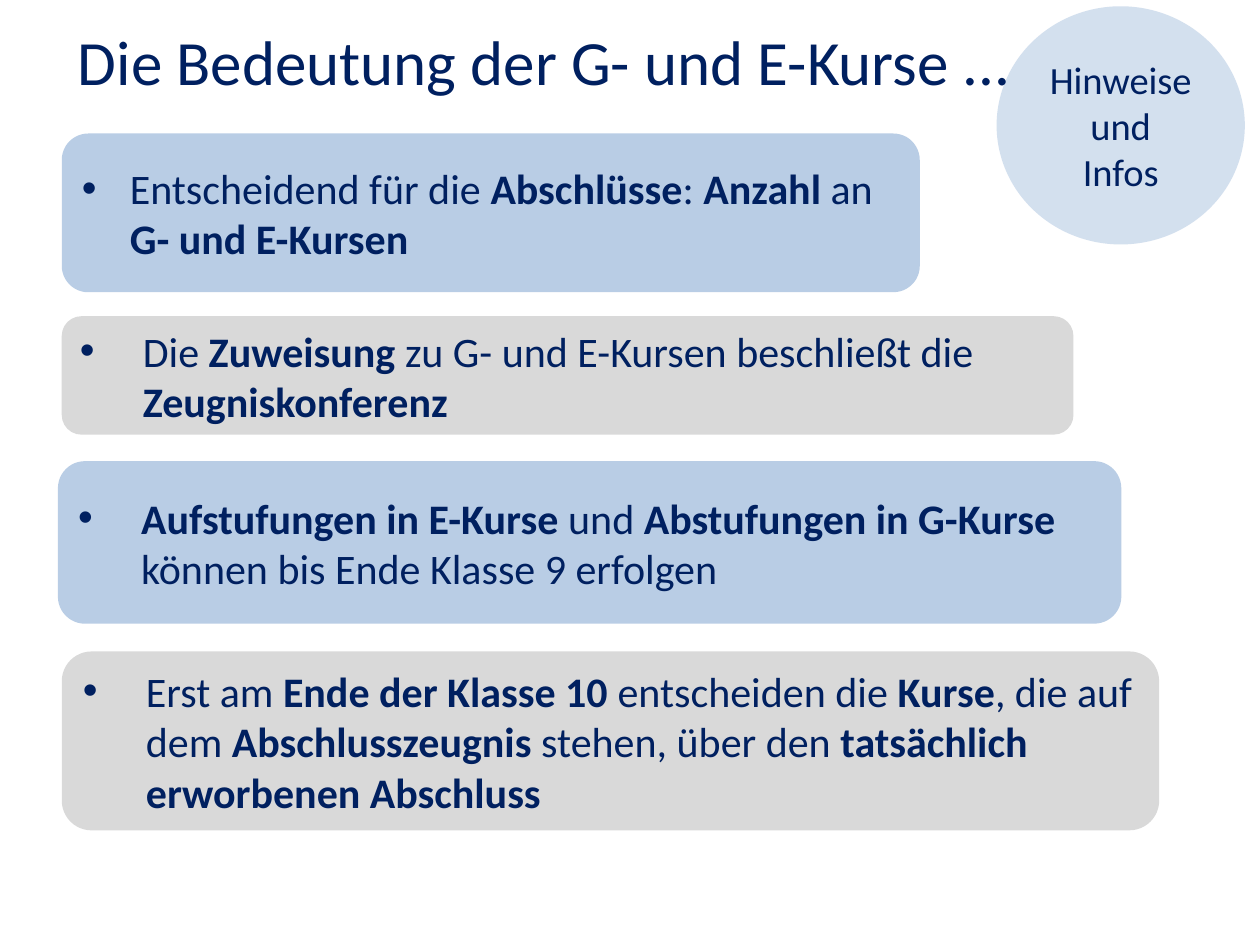
from dataclasses import dataclass

from lxml.etree import SubElement
from pptx import Presentation
from pptx.dml.color import RGBColor
from pptx.enum.shapes import MSO_SHAPE
from pptx.enum.text import MSO_ANCHOR, PP_ALIGN
from pptx.oxml.ns import qn
from pptx.util import Inches, Pt


@dataclass(frozen=True)
class Theme:
    font: str = "Calibri"
    ink: str = "002060"
    blue: str = "B9CDE5"
    gray: str = "D9D9D9"
    title: int = 36
    body: int = 24
    badge: int = 22
    badge_alpha: int = 62


THEME = Theme()
WIDTH, HEIGHT = Inches(10), Inches(7.5)
COLS, ROWS = 100, 75

# Column, row, width and height on the grid
TITLE_BOX = (5.2, 1.3, 96.7, 7.1)
BADGE_BOX = (79.1, 0.5, 19.7, 18.9)

# Box, indent in columns, text with *bold* parts
CARDS = [
    ((4.9, 10.6, 68.1, 12.6), 3.8,
     "Entscheidend für die *Abschlüsse*: *Anzahl* an *G- und E-Kursen*"),
    ((4.9, 25.1, 80.3, 9.4), 5,
     "Die *Zuweisung* zu G- und E-Kursen beschließt die *Zeugniskonferenz*"),
    ((4.6, 36.6, 84.4, 12.9), 5,
     "*Aufstufungen in E-Kurse *und *Abstufungen in G-Kurse*"
     " können bis Ende Klasse 9 erfolgen"),
    ((4.9, 51.7, 87.1, 14.2), 5,
     "Erst am *Ende der Klasse 10 *entscheiden die *Kurse*, die auf dem "
     "*Abschlusszeugnis* stehen, über den *tatsächlich erworbenen Abschluss*"),
]


def place(box):
    left, top, width, height = box
    col, row = WIDTH / COLS, HEIGHT / ROWS
    return [round(n) for n in (left * col, top * row, width * col, height * row)]


def style(run, size, bold=False):
    run.font.name = THEME.font
    run.font.size = Pt(size)
    run.font.bold = bold
    run.font.color.rgb = RGBColor.from_string(THEME.ink)


def add_panel(slide, kind, box, color):
    panel = slide.shapes.add_shape(kind, *place(box))
    panel.shadow.inherit = False
    panel.fill.solid()
    panel.fill.fore_color.rgb = RGBColor.from_string(color)
    panel.line.fill.background()
    panel.text_frame.word_wrap = True
    panel.text_frame.vertical_anchor = MSO_ANCHOR.MIDDLE
    return panel


def add_bullet(para, indent):
    """Hang the paragraph behind a dot, indented by grid columns."""
    props = para._p.get_or_add_pPr()
    depth = round(indent * WIDTH / COLS)
    props.set("marL", str(depth))
    props.set("indent", str(-depth))
    SubElement(props, qn("a:buFont"), typeface="Arial")
    SubElement(props, qn("a:buChar"), char="•")


def add_title(slide, box):
    frame = slide.shapes.add_textbox(*place(box)).text_frame
    frame.word_wrap = True
    frame.text = "Die Bedeutung der G- und E-Kurse ..."
    style(frame.paragraphs[0].runs[0], THEME.title)


def add_badge(slide, box):
    badge = add_panel(slide, MSO_SHAPE.FLOWCHART_CONNECTOR, box, THEME.blue)
    tint = badge.fill._xPr.find(qn("a:solidFill"))[0]
    SubElement(tint, qn("a:alpha"), val=str(THEME.badge_alpha * 1000))
    badge.text_frame.text = "Hinweise und\nInfos"
    for para in badge.text_frame.paragraphs:
        para.alignment = PP_ALIGN.CENTER
        style(para.runs[0], THEME.badge)


def add_card(slide, box, color, indent, text):
    card = add_panel(slide, MSO_SHAPE.ROUNDED_RECTANGLE, box, color)
    para = card.text_frame.paragraphs[0]
    para.alignment = PP_ALIGN.LEFT
    add_bullet(para, indent)
    for i, part in enumerate(text.split("*")):
        if part:
            run = para.add_run()
            run.text = part
            style(run, THEME.body, bold=i % 2 == 1)


def main():
    deck = Presentation()
    deck.slide_width, deck.slide_height = WIDTH, HEIGHT
    slide = deck.slides.add_slide(deck.slide_layouts[6])
    add_badge(slide, BADGE_BOX)
    add_title(slide, TITLE_BOX)
    for i, (box, indent, text) in enumerate(CARDS):
        color = THEME.gray if i % 2 else THEME.blue
        add_card(slide, box, color, indent, text)
    deck.save("out.pptx")


if __name__ == "__main__":
    main()
